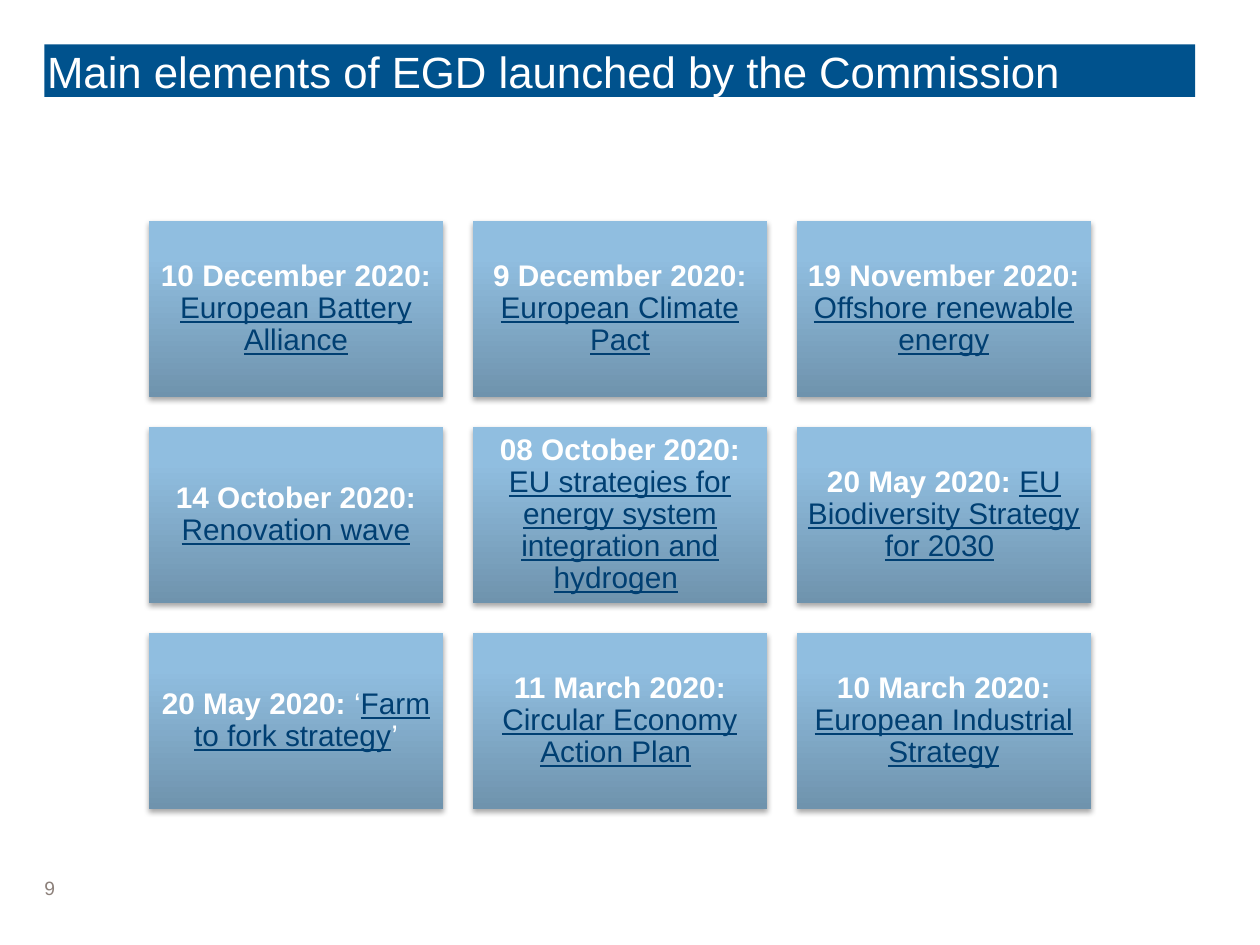
from dataclasses import dataclass

from lxml.etree import SubElement
from pptx import Presentation
from pptx.dml.color import RGBColor
from pptx.enum.shapes import MSO_SHAPE
from pptx.enum.text import MSO_ANCHOR, PP_ALIGN
from pptx.oxml.ns import qn
from pptx.util import Pt


@dataclass(frozen=True)
class Theme:
    font: str = "Arial"
    white: str = "FFFFFF"
    bar: str = "00528D"
    link: str = "003F72"
    grey: str = "8D817B"
    shade: str = "000000"
    ramp: tuple = ((0, "6F93AD"), (80, "90BEE0"), (100, "8FC0E3"))
    head: int = 25
    body: int = 17
    note: int = 11


THEME = Theme()

# Date, text before the underlined name, name, text after it
ITEMS = [
    ("10 December 2020: ", "", "European Battery Alliance", ""),
    ("9 December 2020: ", "", "European Climate Pact", ""),
    ("19 November 2020: ", "", "Offshore renewable energy", ""),
    ("14 October 2020: ", "", "Renovation wave", ""),
    ("08 October 2020: ", "",
     "EU strategies for energy system integration and hydrogen", " "),
    ("20 May 2020: ", "", "EU Biodiversity Strategy for 2030", " "),
    ("20 May 2020: ", "‘", "Farm to fork strategy", "’"),
    ("11 March 2020: ", "", "Circular Economy Action Plan", " "),
    ("10 March 2020: ", "", "European Industrial Strategy", ""),
]


def add_text(para, text, size, color=THEME.white, bold=False, under=False):
    """Append one formatted run to a paragraph."""
    run = para.add_run()
    run.text = text
    font = run.font
    font.name, font.size = THEME.font, Pt(size)
    font.bold, font.underline = bold, under
    font.color.rgb = RGBColor.from_string(color)


def set_frame(shape, anchor, side=0, edge=0):
    """Set margins and anchor; return the first paragraph."""
    frame = shape.text_frame
    frame.word_wrap = True
    frame.vertical_anchor = anchor
    frame.margin_left = frame.margin_right = Pt(side)
    frame.margin_top = frame.margin_bottom = Pt(edge)
    return frame.paragraphs[0]


def add_rect(slide, left, top, width, height):
    rect = slide.shapes.add_shape(
        MSO_SHAPE.RECTANGLE, Pt(left), Pt(top), Pt(width), Pt(height))
    rect.shadow.inherit = False
    rect.line.fill.background()
    return rect


def add_color(parent, color):
    return SubElement(parent, qn("a:srgbClr"), val=color)


def set_ramp(shape):
    """Fill a shape with the three-stop ramp, dark at the bottom."""
    shape.fill.gradient()
    grad = shape._element.spPr.find(qn("a:gradFill"))
    for child in list(grad):
        grad.remove(child)
    stops = SubElement(grad, qn("a:gsLst"))
    for spot, color in THEME.ramp:
        add_color(SubElement(stops, qn("a:gs"), pos=str(spot * 1000)), color)
    SubElement(grad, qn("a:lin"), ang=str(270 * 60000), scaled="0")


def set_shadow(shape):
    """Drop a soft shadow straight down."""
    effects = shape._element.spPr.find(qn("a:effectLst"))
    outer = SubElement(
        effects, qn("a:outerShdw"), blurRad=str(Pt(3.1)), dist=str(Pt(1.8)),
        dir=str(90 * 60000), rotWithShape="0")
    SubElement(add_color(outer, THEME.shade), qn("a:alpha"), val="35000")


def add_title(slide, left, top, width, height):
    bar = add_rect(slide, left, top, width, height)
    bar.fill.solid()
    bar.fill.fore_color.rgb = RGBColor.from_string(THEME.bar)
    para = set_frame(bar, MSO_ANCHOR.BOTTOM, side=1.5)
    para.alignment = PP_ALIGN.LEFT
    add_text(para, "Main elements of EGD launched by the Commission", THEME.head)


def add_tile(slide, left, top, width, height, item):
    tile = add_rect(slide, left, top, width, height)
    set_ramp(tile)
    set_shadow(tile)
    para = set_frame(tile, MSO_ANCHOR.MIDDLE, side=5, edge=5)
    para.alignment = PP_ALIGN.CENTER
    para.line_spacing = 0.9
    date, before, name, after = item
    add_text(para, date, THEME.body, bold=True)
    if before:
        add_text(para, before, THEME.body)
    add_text(para, name, THEME.body, color=THEME.link, under=True)
    if after:
        add_text(para, after, THEME.body)


def add_grid(slide, left, top, width, height, cols=3, gap=16.8):
    """Spread the tiles over the box in equal rows and columns."""
    rows = len(ITEMS) // cols
    wide = (width - gap * (cols - 1)) / cols
    high = (height - gap * (rows - 1)) / rows
    for num, item in enumerate(ITEMS):
        row, col = divmod(num, cols)
        add_tile(slide, left + col * (wide + gap), top + row * (high + gap),
                 wide, high, item)


def add_number(slide, left, top, width, height):
    box = slide.shapes.add_textbox(Pt(left), Pt(top), Pt(width), Pt(height))
    para = set_frame(box, MSO_ANCHOR.BOTTOM)
    para.space_after = Pt(6)
    add_text(para, "9", THEME.note, color=THEME.grey)


def main():
    deck = Presentation()
    deck.slide_width, deck.slide_height = Pt(720), Pt(540)
    slide = deck.slides.add_slide(deck.slide_layouts[6])
    add_title(slide, 25.4, 25.4, 657.5, 30)
    add_grid(slide, 85, 126.2, 538.5, 336.2)
    add_number(slide, 25.4, 489, 28, 25)
    deck.save("out.pptx")


if __name__ == "__main__":
    main()
